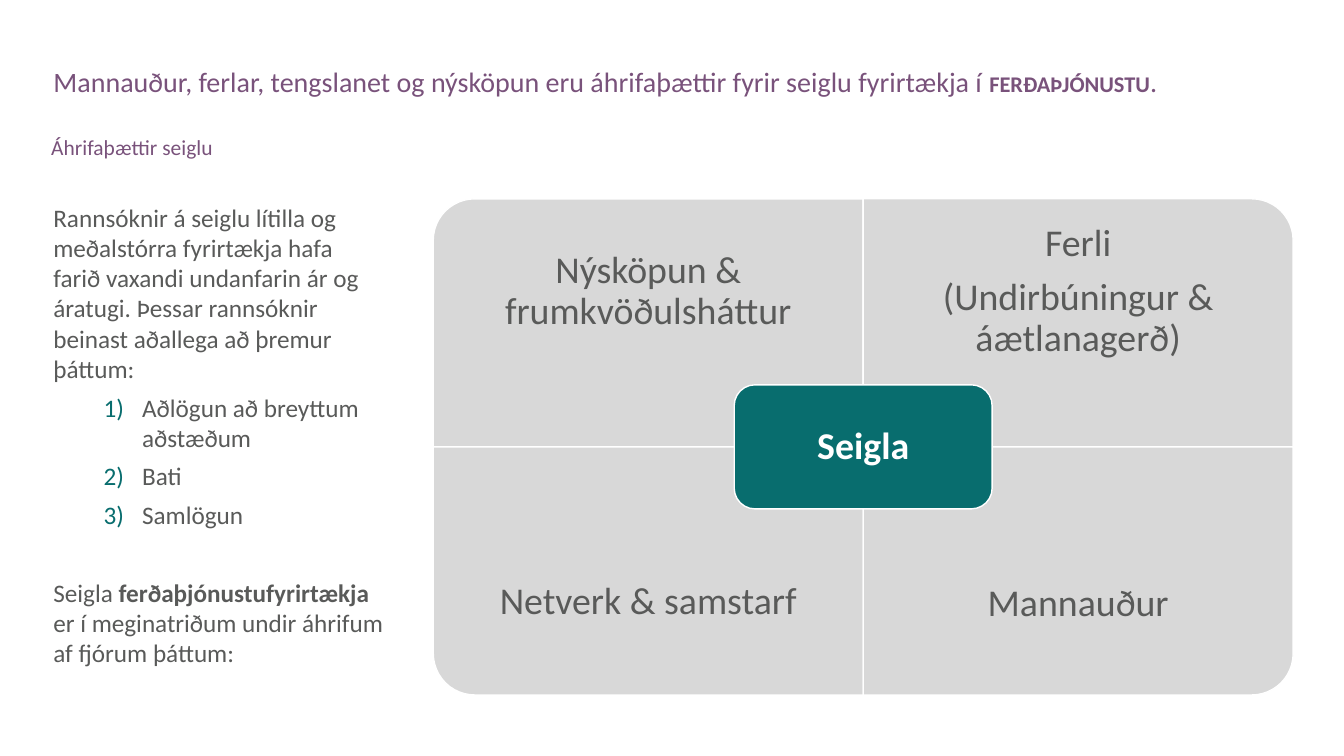
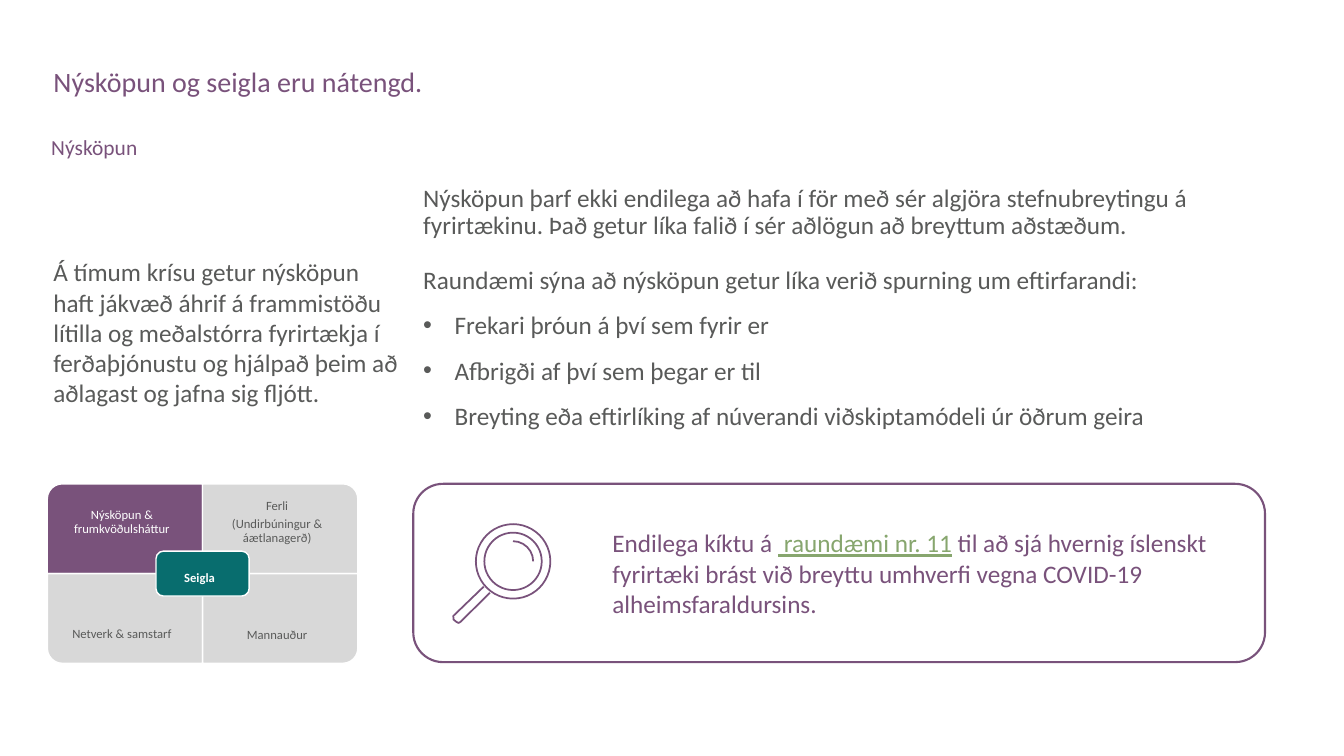
from dataclasses import dataclass

from lxml.etree import SubElement
from pptx import Presentation
from pptx.dml.color import RGBColor
from pptx.enum.shapes import MSO_SHAPE
from pptx.enum.text import MSO_ANCHOR, MSO_AUTO_SIZE, PP_ALIGN
from pptx.oxml.ns import qn
from pptx.util import Pt

COLORS = {
    "purple": "79527B",
    "teal": "086D6E",
    "grey": "D8D8D8",
    "text": "595A59",
    "link": "87A66E",
    "white": "FFFFFF",
}
FONT = "Calibri"
CORNER = 0.167


@dataclass(frozen=True)
class Box:
    left: float
    top: float
    width: float
    height: float

    def lengths(self) -> tuple:
        return tuple(Pt(value) for value in (self.left, self.top, self.width, self.height))


@dataclass(frozen=True)
class Span:
    text: str
    bold: bool = False
    underline: bool = False
    small_caps: bool = False
    color: str = ""


@dataclass(frozen=True)
class Line:
    spans: tuple[Span, ...]
    before: float = 0
    spacing: float = 1.0
    indent: float = 0
    hanging: float = 0
    marker: str = ""
    marker_color: str = "text"


@dataclass(frozen=True)
class Style:
    size: float = 18
    color: str = "text"
    alignment: PP_ALIGN = PP_ALIGN.LEFT
    anchor: MSO_ANCHOR = MSO_ANCHOR.TOP
    margins: tuple[float, float, float, float] = (7.2, 3.6, 7.2, 3.6)


@dataclass(frozen=True)
class Quadrant:
    column: int
    row: int
    rotation: int
    labels: tuple[str, ...]
    spacing: float = 0.9


@dataclass(frozen=True)
class Matrix:
    left: float
    top: float
    cell_width: float
    cell_height: float
    size: float
    margin: float
    center_margin: float
    label_gap: float
    shift_x: float = 0
    shift_y: float = 0


TITLE_BOX = Box(31, 45.4, 903, 46)
SUBTITLE_BOX = Box(29.5, 97.2, 904, 20.2)
TITLE_STYLE = Style(size=20, color="purple")
SUBTITLE_STYLE = Style(size=15.3, color="purple")
SIDE_STYLE = Style(anchor=MSO_ANCHOR.MIDDLE)
CALLOUT_STYLE = Style(color="purple", anchor=MSO_ANCHOR.MIDDLE, margins=(136, 3.6, 16, 3.6))

QUADRANTS = (
    Quadrant(0, 0, 270, ("Nýsköpun & frumkvöðulsháttur",)),
    Quadrant(1, 0, 0, ("Ferli", "(Undirbúningur & áætlanagerð)")),
    Quadrant(0, 1, 180, ("Netverk & samstarf",)),
    Quadrant(1, 1, 90, ("Mannauður",), 1.0),
)
LARGE_MATRIX = Matrix(309.5, 142, 307.1, 177.2, 27, 15.1, 7.9, 9.4)
SMALL_MATRIX = Matrix(33.8, 345.6, 110.9, 64.1, 9, 5, 2.9, 3.1, -2.2, 3.6)

HANDLE = ((350, 423.4), (329, 444.2), (327.6, 445), (326, 444.2),
          (324, 442.6), (323.8, 440), (345.6, 419))


def apply(target, values: dict) -> None:
    for name, value in values.items():
        setattr(target, name, value)


def rgb(name: str) -> RGBColor:
    return RGBColor.from_string(COLORS[name])


def plain(text: str, **options) -> Line:
    return Line((Span(text),), **options)


def add_marker(paragraph, line: Line) -> None:
    properties = paragraph._p.get_or_add_pPr()
    properties.set("marL", str(Pt(line.indent)))
    properties.set("indent", str(-Pt(line.hanging)))
    color = SubElement(properties, qn("a:buClr"))
    SubElement(color, qn("a:srgbClr"), val=COLORS[line.marker_color])
    if line.marker == "number":
        SubElement(properties, qn("a:buAutoNum"), type="arabicParenR")
    else:
        SubElement(properties, qn("a:buFont"), typeface="Arial")
        SubElement(properties, qn("a:buChar"), char=line.marker)


def write(shape, lines: tuple[Line, ...], style: Style) -> None:
    frame = shape.text_frame
    left, top, right, bottom = (Pt(margin) for margin in style.margins)
    apply(frame, {
        "word_wrap": True, "auto_size": MSO_AUTO_SIZE.NONE, "vertical_anchor": style.anchor,
        "margin_left": left, "margin_top": top, "margin_right": right, "margin_bottom": bottom,
    })
    for index, line in enumerate(lines):
        paragraph = frame.add_paragraph() if index else frame.paragraphs[0]
        apply(paragraph, {
            "alignment": style.alignment, "line_spacing": line.spacing,
            "space_before": Pt(line.before), "space_after": Pt(0),
        })
        if line.marker:
            add_marker(paragraph, line)
        for span in line.spans:
            run = paragraph.add_run()
            run.text = span.text
            apply(run.font, {"name": FONT, "size": Pt(style.size),
                             "bold": span.bold, "underline": span.underline})
            run.font.color.rgb = rgb(span.color or style.color)
            if span.small_caps:
                run._r.get_or_add_rPr().set("cap", "small")


def add_text(slide, box: Box, lines: tuple[Line, ...], style: Style) -> None:
    write(slide.shapes.add_textbox(*box.lengths()), lines, style)


def paint(shape, fill: str, line: str, weight: float) -> None:
    """Set fill and outline; an empty fill name leaves the shape hollow."""
    shape.shadow.inherit = False
    if fill:
        shape.fill.solid()
        shape.fill.fore_color.rgb = rgb(fill)
    else:
        shape.fill.background()
    shape.line.color.rgb = rgb(line)
    shape.line.width = Pt(weight)


def add_preset(slide, kind: MSO_SHAPE, box: Box, fill: str, line: str, weight: float):
    shape = slide.shapes.add_shape(kind, *box.lengths())
    paint(shape, fill, line, weight)
    return shape


def add_quadrant(slide, matrix: Matrix, quadrant: Quadrant, fill: str) -> None:
    width, height = matrix.cell_width, matrix.cell_height
    center_x = matrix.left + (quadrant.column + 0.5) * width
    center_y = matrix.top + (quadrant.row + 0.5) * height
    if quadrant.rotation % 180:
        width, height = height, width
    box = Box(center_x - width / 2, center_y - height / 2, width, height)
    shape = add_preset(slide, MSO_SHAPE.ROUND_1_RECTANGLE, box, fill, "white", 1)
    shape.adjustments[0] = CORNER
    shape.rotation = quadrant.rotation


def add_matrix(slide, matrix: Matrix, highlighted: Quadrant | None = None) -> None:
    """Draw four quadrants with a core box, then all their labels."""
    for quadrant in QUADRANTS:
        add_quadrant(slide, matrix, quadrant, "purple" if quadrant == highlighted else "grey")
    width, height = 0.6 * matrix.cell_width, 0.5 * matrix.cell_height
    core = Box(matrix.left + matrix.cell_width - width / 2,
               matrix.top + matrix.cell_height - height / 2, width, height)
    shape = add_preset(slide, MSO_SHAPE.ROUNDED_RECTANGLE, core, "teal", "white", 1)
    shape.adjustments[0] = CORNER

    label_height = 0.75 * matrix.cell_height
    for quadrant in QUADRANTS:
        box = Box(matrix.left + quadrant.column * matrix.cell_width + matrix.shift_x,
                  matrix.top + quadrant.row * (2 * matrix.cell_height - label_height)
                  + matrix.shift_y, matrix.cell_width, label_height)
        color = "white" if quadrant == highlighted else "text"
        lines = tuple(plain(label, spacing=quadrant.spacing,
                            before=matrix.label_gap if index else 0)
                      for index, label in enumerate(quadrant.labels))
        add_text(slide, box, lines, Style(matrix.size, color, PP_ALIGN.CENTER,
                                          MSO_ANCHOR.MIDDLE, (matrix.margin,) * 4))
    core_label = Box(core.left + matrix.shift_x, core.top + matrix.shift_y, width, height)
    add_text(slide, core_label, (Line((Span("Seigla", bold=True),), spacing=0.9),),
             Style(matrix.size, "white", PP_ALIGN.CENTER, MSO_ANCHOR.MIDDLE,
                   (matrix.center_margin,) * 4))


def add_magnifier(slide) -> None:
    center_x, center_y = 366.5, 401
    for kind, radius in ((MSO_SHAPE.OVAL, 26.6), (MSO_SHAPE.OVAL, 20.5), (MSO_SHAPE.ARC, 14.4)):
        box = Box(center_x - radius, center_y - radius, 2 * radius, 2 * radius)
        add_preset(slide, kind, box, "", "purple", 1.25)
    points = [(Pt(x), Pt(y)) for x, y in HANDLE]
    builder = slide.shapes.build_freeform(*points[0])
    builder.add_line_segments(points[1:], close=False)
    paint(builder.convert_to_shape(), "", "purple", 1.25)


def add_titled_slide(presentation, title: tuple[Span, ...], subtitle: str):
    slide = presentation.slides.add_slide(presentation.slide_layouts[5])
    heading = slide.shapes.title
    apply(heading, dict(zip(("left", "top", "width", "height"), TITLE_BOX.lengths())))
    write(heading, (Line(title, spacing=0.9),), TITLE_STYLE)
    add_text(slide, SUBTITLE_BOX, (plain(subtitle, spacing=0.7),), SUBTITLE_STYLE)
    return slide


def add_factors_slide(presentation) -> None:
    slide = add_titled_slide(presentation, (
        Span("Mannauður, ferlar, tengslanet og nýsköpun eru áhrifaþættir "
             "fyrir seiglu fyrirtækja í "),
        Span("ferðaþjónustu", bold=True, small_caps=True),
        Span("."),
    ), "Áhrifaþættir seiglu")
    add_matrix(slide, LARGE_MATRIX)
    factors = tuple(
        plain(text, before=6, indent=63.4, hanging=27.4, marker="number", marker_color="teal")
        for text in ("Aðlögun að breyttum aðstæðum", "Bati", "Samlögun"))
    add_text(slide, Box(31, 128.9, 251.3, 363.6), (
        plain("Rannsóknir á seiglu lítilla og meðalstórra fyrirtækja hafa farið vaxandi "
              "undanfarin ár og áratugi. Þessar rannsóknir beinast aðallega að þremur þáttum:"),
        *factors,
        Line((Span("Seigla "), Span("ferðaþjónustufyrirtækja ", bold=True),
              Span("er í meginatriðum undir áhrifum af fjórum þáttum:")), before=34),
    ), SIDE_STYLE)


def add_innovation_slide(presentation) -> None:
    slide = add_titled_slide(presentation, (Span("Nýsköpun og seigla eru nátengd."),), "Nýsköpun")
    add_text(slide, Box(31, 128.9, 262.8, 216.7), (
        plain("Á tímum krísu getur nýsköpun haft jákvæð áhrif á frammistöðu lítilla og "
              "meðalstórra fyrirtækja í ferðaþjónustu og hjálpað þeim að aðlagast og "
              "jafna sig fljótt."),
    ), SIDE_STYLE)
    examples = tuple(
        plain(text, spacing=1.5, indent=22.5, hanging=22.5, marker="•")
        for text in ("Frekari þróun á því sem fyrir er",
                     "Afbrigði af því sem þegar er til",
                     "Breyting eða eftirlíking af núverandi viðskiptamódeli úr öðrum geira"))
    add_text(slide, Box(295.2, 128.9, 630.7, 200), (
        plain("Nýsköpun þarf ekki endilega að hafa í för með sér algjöra stefnubreytingu á "
              "fyrirtækinu. Það getur líka falið í sér aðlögun að breyttum aðstæðum.",
              spacing=0.9),
        plain("Raundæmi sýna að nýsköpun getur líka verið spurning um eftirfarandi:",
              spacing=0.9, before=19.6),
        *examples,
    ), Style())
    add_matrix(slide, SMALL_MATRIX, highlighted=QUADRANTS[0])
    callout = add_preset(slide, MSO_SHAPE.ROUNDED_RECTANGLE, Box(295.2, 345.6, 608.4, 127.4),
                         "", "purple", 1.5)
    callout.adjustments[0] = CORNER
    write(callout, (Line((
        Span("Endilega kíktu á "),
        Span(" raundæmi nr. 11", underline=True, color="link"),
        Span(" til að sjá hvernig íslenskt fyrirtæki brást við breyttu umhverfi "
             "vegna COVID-19 alheimsfaraldursins."),
    )),), CALLOUT_STYLE)
    add_magnifier(slide)


def main() -> None:
    presentation = Presentation()
    apply(presentation, {"slide_width": Pt(960), "slide_height": Pt(540)})
    add_factors_slide(presentation)
    add_innovation_slide(presentation)
    presentation.save("out.pptx")


if __name__ == "__main__":
    main()
